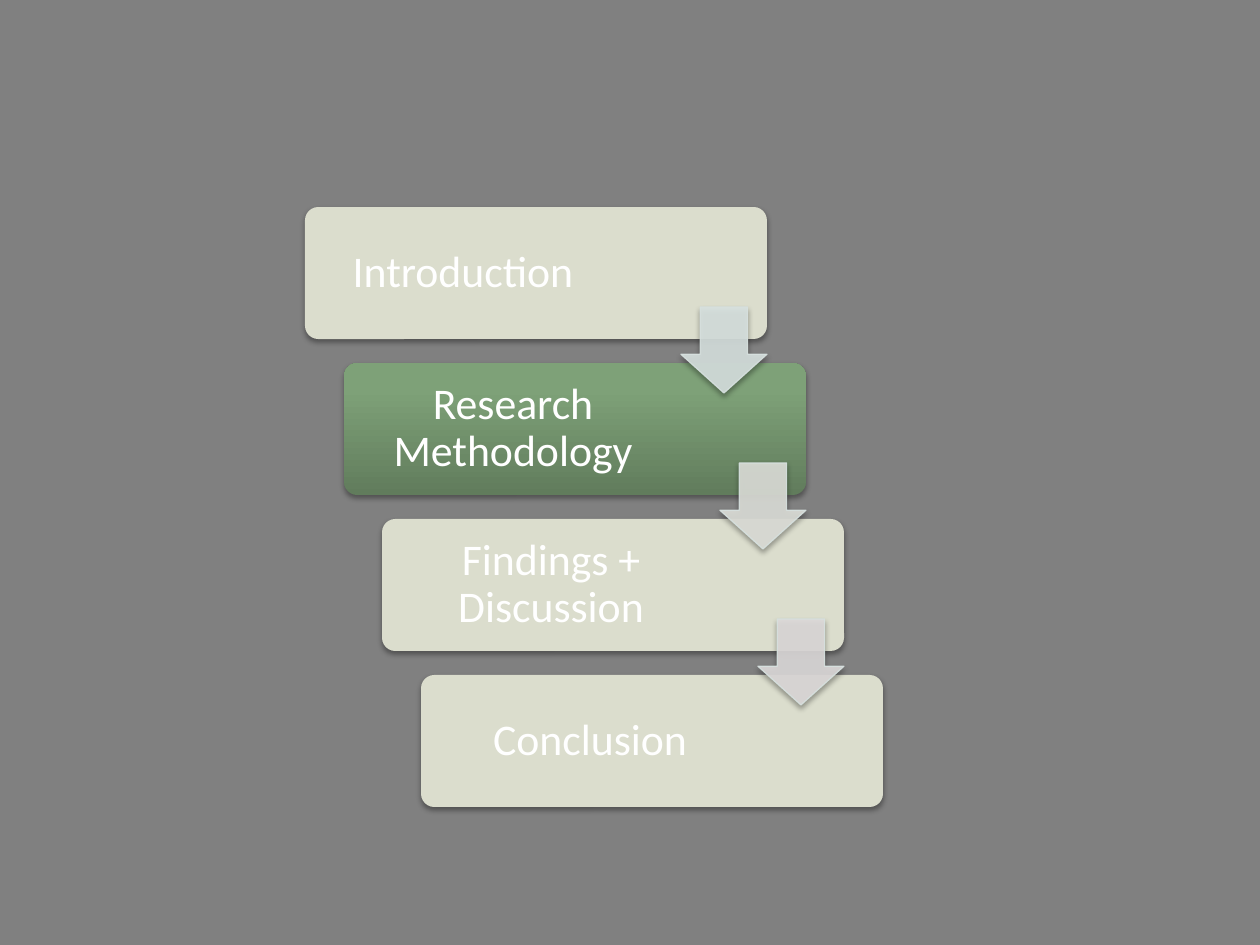
"""Build a slide with a descending staircase of four report stages."""
from copy import deepcopy

from lxml import etree
from pptx import Presentation
from pptx.dml.color import RGBColor
from pptx.enum.shapes import MSO_SHAPE
from pptx.enum.text import MSO_ANCHOR, PP_ALIGN
from pptx.oxml import parse_xml
from pptx.oxml.ns import nsdecls, qn
from pptx.util import Emu, Pt

ROUNDED, DOWN_ARROW = MSO_SHAPE.ROUNDED_RECTANGLE, MSO_SHAPE.DOWN_ARROW
MIDDLE, CENTER = MSO_ANCHOR.MIDDLE, PP_ALIGN.CENTER
PX_PER_INCH = 126

STAGES = ["Introduction", "Research Methodology", "Findings + Discussion", "Conclusion"]
CURRENT = 1
MUTED = "DBDDCD"
HIGHLIGHT = [(0, "617C5C"), (0.8, "7EA178"), (1, "7EA378")]
ARROW_FILLS = ["D7E1DF", "DDDFD9", "DDDADA"]
ARROW_LINE = "D7E1DF"
LEFT, TOP, STEP_X, STEP_Y = 305, 207, 38.6, 156
BOX_W, BOX_H = 462, 132
ARROW_DX, ARROW_DY, ARROW_SIZE = 376, 100, 86

SHADOW = (
    f'<a:effectLst {nsdecls("a")}>'
    '<a:outerShdw blurRad="39400" dist="22900" dir="5400000" rotWithShape="0">'
    '<a:srgbClr val="000000"><a:alpha val="35000"/></a:srgbClr>'
    "</a:outerShdw></a:effectLst>"
)


def px(n):
    return Emu(round(n * 914400 / PX_PER_INCH))


def rgb(value):
    return RGBColor.from_string(value)


def apply(obj, values):
    for name, value in values.items():
        setattr(obj, name, value)


class Deck:
    """Hold the text style and the current slide."""

    font = {"name": "Calibri", "size": Pt(25)}
    paragraph = {"alignment": CENTER, "line_spacing": 0.9}
    frame = {"word_wrap": True, "vertical_anchor": MIDDLE}
    margins = dict.fromkeys(
        ["margin_left", "margin_top", "margin_right", "margin_bottom"], px(13))

    def __init__(self, prs, background):
        self.s = prs.slides.add_slide(prs.slide_layouts[6])
        fill = self.s.background.fill
        fill.solid()
        fill.fore_color.rgb = rgb(background)

    def shape(self, kind, box, adjustments):
        sp = self.s.shapes.add_shape(kind, *map(px, box))
        for i, value in enumerate(adjustments):
            sp.adjustments[i] = value
        return sp

    def shadow(self, sp):
        sp._element.spPr.append(parse_xml(SHADOW))

    def gradient(self, fill, stops):
        fill.gradient()
        fill.gradient_angle = 90
        gs_list = fill._xPr.find(".//" + qn("a:gsLst"))
        gs_list.append(deepcopy(gs_list[-1]))
        for stop, (position, color) in zip(fill.gradient_stops, stops):
            stop.position = position
            stop.color.rgb = rgb(color)

    def panel(self, box, highlighted):
        sp = self.shape(ROUNDED, box, [0.1])
        if highlighted:
            self.gradient(sp.fill, HIGHLIGHT)
        else:
            sp.fill.solid()
            sp.fill.fore_color.rgb = rgb(MUTED)
        sp.line.fill.background()
        self.shadow(sp)

    def label(self, box, text):
        tf = self.s.shapes.add_textbox(*map(px, box)).text_frame
        apply(tf, self.frame | self.margins)
        p = tf.paragraphs[0]
        apply(p, self.paragraph)
        r = p.add_run()
        r.text = text
        apply(r.font, self.font)
        r.font.color.rgb = rgb("FFFFFF")

    def arrow(self, box, color):
        sp = self.shape(DOWN_ARROW, box, [0.55, 0.45])
        sp.line.width = Pt(0.75)
        for fill, value in ((sp.fill, color), (sp.line.fill, ARROW_LINE)):
            fill.solid()
            fill.fore_color.rgb = rgb(value)
        for clr in sp._element.spPr.iter(qn("a:srgbClr")):
            etree.SubElement(clr, qn("a:alpha")).set("val", "90000")
        self.shadow(sp)


def main():
    prs = Presentation()
    prs.slide_width, prs.slide_height = px(1260), px(945)
    deck = Deck(prs, "808080")
    corners = [(LEFT + round(STEP_X * i), TOP + STEP_Y * i) for i in range(len(STAGES))]
    for i, ((x, y), stage) in enumerate(zip(corners, STAGES)):
        deck.panel((x, y, BOX_W, BOX_H), i == CURRENT)
        deck.label((x, y, 338 if i else 316, BOX_H), stage)
    for (x, y), color in zip(corners, ARROW_FILLS):
        deck.arrow((x + ARROW_DX, y + ARROW_DY, ARROW_SIZE, ARROW_SIZE), color)
    prs.save("out.pptx")


if __name__ == "__main__":
    main()
